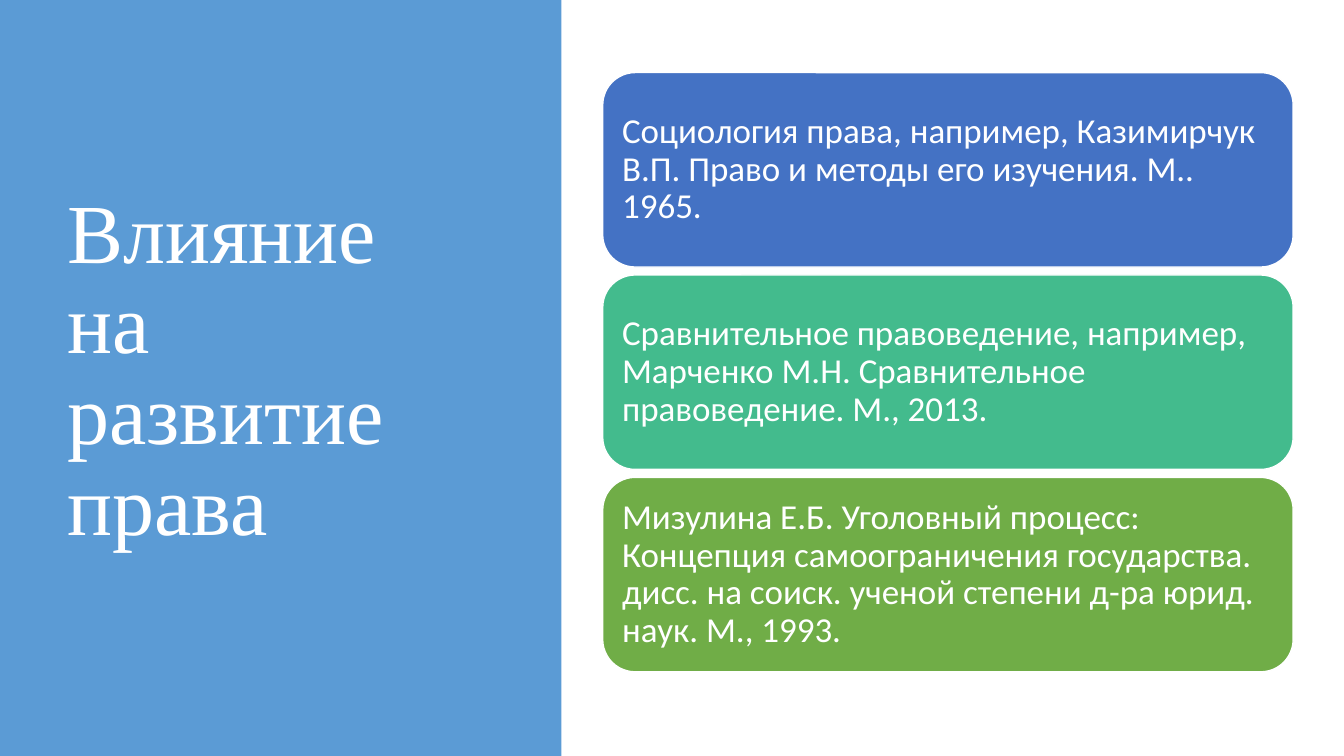
from pptx import Presentation
from pptx.dml.color import RGBColor
from pptx.enum.shapes import MSO_SHAPE
from pptx.enum.text import MSO_ANCHOR, PP_ALIGN
from pptx.util import Cm, Pt

HUES = {
    "panel": "5B9BD5",
    "blue": "4472C4",
    "teal": "43BB8D",
    "green": "70AD47",
    "white": "FFFFFF",
}

CARDS = [
    ("blue", "Социология права, например, Казимирчук В.П. "
             "Право и методы его изучения. М.. 1965."),
    ("teal", "Сравнительное правоведение, например, Марченко М.Н. "
             "Сравнительное правоведение. М., 2013."),
    ("green", "Мизулина Е.Б. Уголовный процесс: Концепция "
              "самоограничения государства. дисс. на соиск. "
              "ученой степени д-ра юрид. наук. М., 1993."),
]


class Deck:
    def __init__(self):
        self.show = Presentation()
        self.show.slide_width = Cm(33.87)
        self.show.slide_height = Cm(19.05)
        self.slide = self.show.slides.add_slide(self.show.slide_layouts[6])
        self.head = "Times New Roman"
        self.body = "Calibri"

    def hue(self, name):
        return RGBColor.from_string(HUES[name])

    def block(self, kind, box, fill, edge=None):
        """Add a filled shape; box is left, top, width, height in cm."""
        shape = self.slide.shapes.add_shape(kind, *map(Cm, box))
        shape.shadow.inherit = False
        shape.fill.solid()
        shape.fill.fore_color.rgb = self.hue(fill)
        if edge:
            shape.line.color.rgb = self.hue(edge)
            shape.line.width = Pt(1)
        else:
            shape.line.fill.background()
        return shape

    def label(self, shape, text, font, size, pad):
        """Fill a shape with one left-aligned, middle-anchored paragraph."""
        frame = shape.text_frame
        frame.word_wrap = True
        frame.vertical_anchor = MSO_ANCHOR.MIDDLE
        frame.margin_left = frame.margin_right = Cm(0.25)
        frame.margin_top = frame.margin_bottom = Cm(pad)
        para = frame.paragraphs[0]
        para.alignment = PP_ALIGN.LEFT
        para.line_spacing = 0.9
        run = para.add_run()
        run.text = text
        run.font.name = font
        run.font.size = Pt(size)
        run.font.color.rgb = self.hue("white")

    def title(self, box, text):
        shape = self.slide.shapes.add_textbox(*map(Cm, box))
        self.label(shape, text, self.head, 60, 0.13)

    def card(self, box, fill, text):
        shape = self.block(MSO_SHAPE.ROUNDED_RECTANGLE, box, fill, "white")
        self.label(shape, text, self.body, 25, 0.25)

    def save(self):
        self.show.save("out.pptx")


def main():
    deck = Deck()
    deck.block(MSO_SHAPE.RECTANGLE, (0, 0, 14.15, 19.05), "panel")
    deck.title((1.45, 1.73, 10.57, 15.29), "Влияние на развитие права")
    top, high, gap = 1.83, 4.9, 0.2
    for row, (fill, text) in enumerate(CARDS):
        deck.card((15.19, top + row * (high + gap), 17.4, high), fill, text)
    deck.save()


if __name__ == "__main__":
    main()
